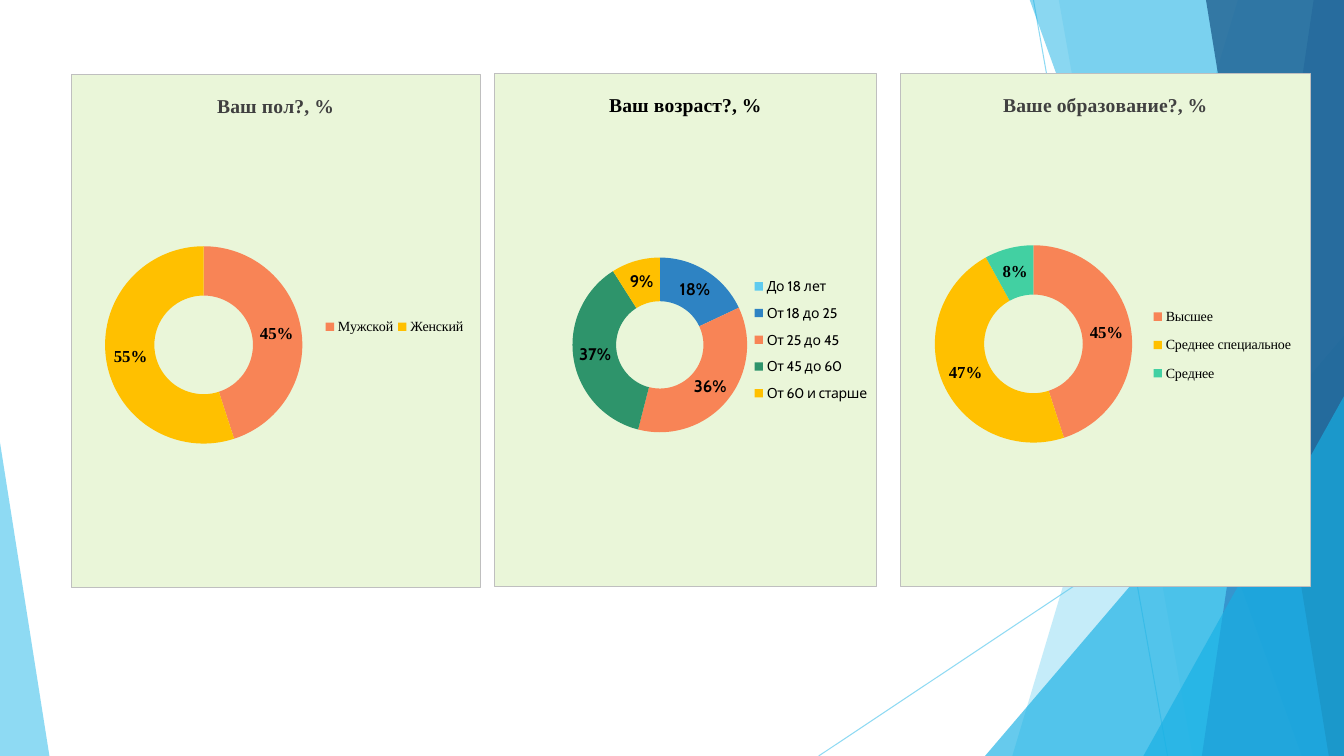
from lxml import etree
from pptx import Presentation
from pptx.chart.data import CategoryChartData
from pptx.dml.color import RGBColor
from pptx.enum.chart import XL_CHART_TYPE, XL_LEGEND_POSITION
from pptx.enum.shapes import MSO_CONNECTOR, MSO_SHAPE
from pptx.oxml import parse_xml
from pptx.oxml.ns import qn
from pptx.util import Inches, Pt

DOUGHNUT = XL_CHART_TYPE.DOUGHNUT
LEGEND_RIGHT = XL_LEGEND_POSITION.RIGHT
STRAIGHT = MSO_CONNECTOR.STRAIGHT
TRIANGLE = MSO_SHAPE.ISOSCELES_TRIANGLE
NAMESPACES = ('xmlns:c="http://schemas.openxmlformats.org/drawingml/2006/chart" '
              'xmlns:a="http://schemas.openxmlformats.org/drawingml/2006/main"')

WIDTH, HEIGHT, TOP = 13.33, 7.5, -0.01
SERIF = "Times New Roman"
BLACK, GRAY = "000000", "404040"
SKY, CYAN, BLUE, NAVY = "5FCBEF", "17B0E4", "2E83C3", "226292"
CORAL, AMBER, GREEN, MINT = "F88456", "FFC000", "2E946B", "42D0A2"
PANEL, PANEL_BORDER = "EAF6D9", "BFBFBF"

# Background: lines as (x1, y1, x2, y2)
RAYS = [(10.25, 0, 11.58, HEIGHT), (WIDTH, 4.03, 8.12, HEIGHT)]
# Back to front: bands as (top x, bottom x), triangles as (left, top, width, apex)
FACETS = [
    ("band", (12.28, 10.04), SKY, 36),
    ("band", (10.5, 11.83), SKY, 20),
    ("triangle", (9.77, 3.33, 3.56, 1), CYAN, 66),
    ("band", (10.21, 12.91), CYAN, 50),
    ("band", (13.03, 11.92), BLUE, 70),
    ("band", (11.96, 13.18), NAVY, 80),
    ("triangle", (11.34, 3.93, 1.99, 1), CYAN, 66),
    ("triangle", (0, 4.39, 0.49, 0), SKY, 70),
]

# Charts: "plot" and "legend" are fractions of the chart (x, y, width, height)
SIDE_PLOT = (0.083, 0.316, 0.482, 0.424)
CHARTS = [
    {"title": "Ваш пол?, %", "title_color": GRAY, "font": SERIF,
     "box": (0.7, 0.73, 4.07, 5.1), "plot": SIDE_PLOT,
     "legend": (0.61, 0.465, 0.36, 0.055),
     "slices": [("Мужской", 45, CORAL), ("Женский", 55, AMBER)]},
    {"title": "Ваш возраст?, %", "title_color": BLACK, "font": "Cabin",
     "box": (4.9, 0.72, 3.8, 5.1), "plot": (0.204, 0.33, 0.457, 0.4),
     "legend": (0.665, 0.38, 0.325, 0.28),
     "slices": [("До 18 лет", None, SKY), ("От 18 до 25", 18, BLUE),
                ("От 25 до 45", 36, CORAL), ("От 45 до 60", 37, GREEN),
                ("От 60 и старше", 9, AMBER)]},
    {"title": "Ваше образование?, %", "title_color": GRAY, "font": SERIF,
     "box": (8.93, 0.72, 4.07, 5.1), "plot": SIDE_PLOT,
     "legend": (0.595, 0.435, 0.38, 0.19),
     "slices": [("Высшее", 45, CORAL), ("Среднее специальное", 47, AMBER),
                ("Среднее", 8, MINT)]},
]


def color(hex_text):
    return RGBColor.from_string(hex_text)


def set_alpha(fill_parent, percent):
    for rgb in fill_parent.iter(qn("a:srgbClr")):
        etree.SubElement(rgb, qn("a:alpha")).set("val", str(percent * 1000))


def style_font(font, name, size, hex_text, bold=False):
    font.name, font.size, font.bold = name, Pt(size), bold
    font.color.rgb = color(hex_text)


def layout_xml(box, inner=False):
    target = '<c:layoutTarget val="inner"/>' if inner else ""
    modes = "".join(f'<c:{tag} val="edge"/>' for tag in ("xMode", "yMode"))
    sizes = "".join(f'<c:{tag} val="{value}"/>' for tag, value in zip("xywh", box))
    return parse_xml(f"<c:layout {NAMESPACES}><c:manualLayout>{target}{modes}{sizes}"
                     "</c:manualLayout></c:layout>")


def remove_layout(element):
    for layout in element.findall(qn("c:layout")):
        element.remove(layout)


def add_ray(slide, ends):
    ray = slide.shapes.add_connector(STRAIGHT, *map(Inches, ends))
    ray.line.color.rgb = color(SKY)
    ray.line.width = Pt(0.75)
    properties = ray._element.spPr
    set_alpha(properties, 70)
    etree.SubElement(properties, qn("a:effectLst"))


def add_facet(slide, kind, geometry, hex_text, opacity):
    if kind == "band":
        top_x, bottom_x = geometry
        builder = slide.shapes.build_freeform(Inches(top_x), Inches(TOP))
        corners = [(WIDTH, TOP), (WIDTH, HEIGHT), (bottom_x, HEIGHT)]
        builder.add_line_segments([(Inches(x), Inches(y)) for x, y in corners], close=True)
        shape = builder.convert_to_shape()
    else:
        left, top, width, apex = geometry
        shape = slide.shapes.add_shape(
            TRIANGLE, *map(Inches, (left, top, width, HEIGHT - top)))
        shape.adjustments[0] = apex
    shape.shadow.inherit = False
    shape.line.fill.background()
    shape.fill.solid()
    shape.fill.fore_color.rgb = color(hex_text)
    set_alpha(shape._element.spPr, opacity)


def add_doughnut(slide, content):
    names, values, colors = zip(*content["slices"])
    data = CategoryChartData(number_format="General")
    data.categories = names
    data.add_series("Series 1", values)
    box = map(Inches, content["box"])
    chart = slide.shapes.add_chart(DOUGHNUT, *box, data).chart
    style_font(chart.font, content["font"], 10, BLACK)

    # Title
    chart.has_title = True
    chart.chart_title.include_in_layout = False
    title = chart.chart_title.text_frame
    title.text = content["title"]
    style_font(title.paragraphs[0].runs[0].font, SERIF, 14, content["title_color"], True)

    # Slices and percent labels
    plot = chart.plots[0]
    plot.vary_by_categories = True
    for index, hex_text in enumerate(colors):
        point_format = plot.series[0].points[index].format
        point_format.fill.solid()
        point_format.fill.fore_color.rgb = color(hex_text)
        point_format.line.fill.background()
    labels = plot.series[0].data_labels
    labels.show_percentage, labels.show_value = True, False
    labels.number_format, labels.number_format_is_linked = "0%", False
    style_font(labels.font, content["font"], 12, BLACK, True)

    # Legend
    chart.has_legend = True
    chart.legend.position = LEGEND_RIGHT
    chart.legend.include_in_layout = False
    style_font(chart.legend.font, content["font"], 10, BLACK)

    # Placement of ring and legend, panel fill and border
    chart_space = chart.element
    plot_area = next(chart_space.iter(qn("c:plotArea")))
    remove_layout(plot_area)
    plot_area.insert(0, layout_xml(content["plot"], inner=True))
    legend = next(chart_space.iter(qn("c:legend")))
    remove_layout(legend)
    legend.find(qn("c:legendPos")).addnext(layout_xml(content["legend"]))
    chart_space.find(qn("c:chart")).addnext(parse_xml(
        f'<c:spPr {NAMESPACES}><a:solidFill><a:srgbClr val="{PANEL}"/></a:solidFill>'
        f'<a:ln w="{Pt(0.75)}"><a:solidFill><a:srgbClr val="{PANEL_BORDER}"/>'
        "</a:solidFill></a:ln></c:spPr>"))


def main():
    presentation = Presentation()
    presentation.slide_width, presentation.slide_height = Inches(WIDTH), Inches(HEIGHT)
    slide = presentation.slides.add_slide(presentation.slide_layouts[6])
    for ends in RAYS:
        add_ray(slide, ends)
    for facet in FACETS:
        add_facet(slide, *facet)
    for content in CHARTS:
        add_doughnut(slide, content)
    presentation.save("out.pptx")


if __name__ == "__main__":
    main()
